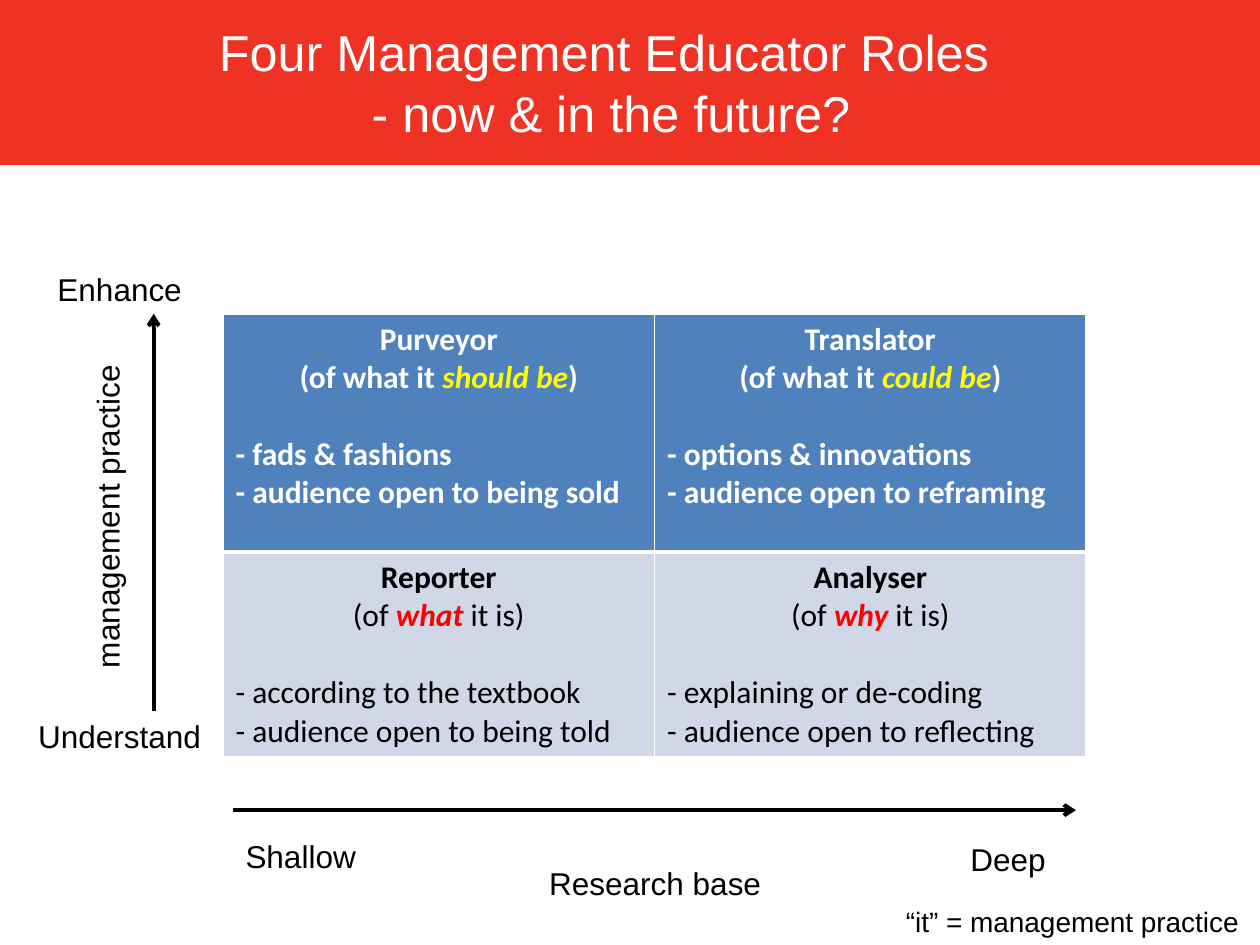
from lxml.etree import SubElement
from pptx import Presentation
from pptx.dml.color import RGBColor
from pptx.enum.shapes import MSO_CONNECTOR, MSO_SHAPE
from pptx.enum.text import MSO_ANCHOR, MSO_AUTO_SIZE, PP_ALIGN
from pptx.oxml import parse_xml
from pptx.oxml.ns import nsdecls, qn
from pptx.util import Inches, Pt

WHITE = RGBColor(0xFF, 0xFF, 0xFF)
BLACK = RGBColor(0, 0, 0)
BANNER_RED = RGBColor(0xEE, 0x32, 0x24)
BLUE = RGBColor(0x4F, 0x81, 0xBD)
PALE_BLUE = RGBColor(0xD0, 0xD8, 0xE8)
YELLOW = RGBColor(0xFF, 0xFF, 0)
RED = RGBColor(0xFF, 0, 0)
LEFT, CENTER, RIGHT = PP_ALIGN.LEFT, PP_ALIGN.CENTER, PP_ALIGN.RIGHT

# Content
TITLE = "Four Management Educator Roles \v- now & in the future?"

# Role, scope (before, stressed, after), traits
ROLES = [
    [("Purveyor", ("(of what it ", "should be", ")"),
      ["- fads & fashions", "- audience open to being sold"]),
     ("Translator", ("(of what it ", "could be", ")"),
      ["- options & innovations", "- audience open to reframing"])],
    [("Reporter", ("(of ", "what ", "it is)"),
      ["- according to the textbook", "- audience open to being told"]),
     ("Analyser", ("(of ", "why", " it is)"),
      ["- explaining or de-coding", "- audience open to reflecting"])],
]
ROW_STYLES = [
    {"height": 1.89, "fill": BLUE, "text": WHITE, "stress": YELLOW, "bold": True,
     "borders": {"L": 1, "R": 1, "T": 1, "B": 3}},
    {"height": 1.5, "fill": PALE_BLUE, "text": BLACK, "stress": RED, "bold": False,
     "borders": {"L": 1, "R": 1, "T": 3, "B": 1}},
]
GRID_LEFT, GRID_TOP, GRID_WIDTH = 1.77, 2.49, 6.85

# Text, left, top, width, alignment, rotation
LABEL_HEIGHT = 0.4
LABELS = [
    ("Research base", 3.86, 6.81, 2.68, CENTER, 0),
    ("Shallow", 1.85, 6.59, 1.49, LEFT, 0),
    ("Deep", 7.29, 6.62, 1.42, CENTER, 0),
    ("management practice", -0.53, 3.82, 2.76, LEFT, 270),
    ("Understand", 0.2, 5.64, 1.5, CENTER, 0),
    ("Enhance", 0.2, 2.09, 1.5, CENTER, 0),
    ("“it” = management practice", 6.53, 7.1, 3.47, RIGHT, 0),
]
NOTE_SIZE = 16

# Start and end of each axis
AXES = [((1.85, 6.43), (8.54, 6.43)), ((1.22, 5.64), (1.22, 2.49))]


def set_font(font, color, **values):
    for name, value in values.items():
        setattr(font, name, value)
    font.color.rgb = color


def add_run(paragraph, text, color, **values):
    run = paragraph.add_run()
    run.text = text
    set_font(run.font, color, **values)


def add_borders(cell, widths):
    properties = cell._tc.get_or_add_tcPr()
    for position, (side, width) in enumerate(widths.items()):
        properties.insert(position, parse_xml(
            f'<a:ln{side} {nsdecls("a")} w="{Pt(width)}"><a:solidFill>'
            f'<a:srgbClr val="{WHITE}"/></a:solidFill></a:ln{side}>'))


def fill_role(cell, role, scope, traits, style):
    cell.fill.solid()
    cell.fill.fore_color.rgb = style["fill"]
    add_borders(cell, style["borders"])
    frame = cell.text_frame
    plain = {"name": "Calibri", "size": Pt(18), "bold": style["bold"], "italic": False}
    strong = {**plain, "bold": True}

    heading = frame.paragraphs[0]
    heading.alignment = CENTER
    add_run(heading, role, style["text"], **strong)

    scope_line = frame.add_paragraph()
    scope_line.alignment = CENTER
    before, stressed, after = scope
    add_run(scope_line, before, style["text"], **plain)
    add_run(scope_line, stressed, style["stress"], **{**strong, "italic": True})
    add_run(scope_line, after, style["text"], **plain)

    for index, trait in enumerate(traits):
        trait_line = frame.add_paragraph()
        trait_line.alignment = LEFT
        trait_line.space_before = Pt(0 if index else 22)
        add_run(trait_line, trait, style["text"], **plain)


def add_label(slide, text, left, top, width, alignment, rotation):
    label = slide.shapes.add_textbox(
        Inches(left), Inches(top), Inches(width), Inches(LABEL_HEIGHT))
    label.rotation = rotation
    frame = label.text_frame
    frame.word_wrap = True
    frame.auto_size = MSO_AUTO_SIZE.SHAPE_TO_FIT_TEXT
    frame.vertical_anchor = MSO_ANCHOR.MIDDLE if rotation else MSO_ANCHOR.TOP
    line = frame.paragraphs[0]
    line.alignment = alignment
    is_note = alignment == RIGHT
    add_run(line, text, BLACK, name="Arial", size=Pt(NOTE_SIZE if is_note else 18))
    if is_note:
        add_run(line, " ", BLACK, name="Arial", size=Pt(18))


def add_axis(slide, start, end):
    axis = slide.shapes.add_connector(
        MSO_CONNECTOR.STRAIGHT, *(Inches(value) for value in start + end))
    axis.line.color.rgb = BLACK
    axis.line.width = Pt(2.25)
    SubElement(axis.line._get_or_add_ln(), qn("a:tailEnd"), type="arrow")
    SubElement(axis._element.spPr, qn("a:effectLst"))


def main():
    deck = Presentation()
    deck.slide_width, deck.slide_height = Inches(10), Inches(7.5)
    slide = deck.slides.add_slide(deck.slide_layouts[5])

    # Banner, sent behind the title
    banner = slide.shapes.add_shape(MSO_SHAPE.RECTANGLE, 0, 0, Inches(10), Inches(1.31))
    banner.shadow.inherit = False
    banner.fill.solid()
    banner.fill.fore_color.rgb = BANNER_RED
    banner.line.fill.background()
    slide.shapes._spTree.insert(2, banner._element)

    # Title
    title = slide.shapes.title
    place = {"left": 0.35, "top": 0.18, "width": 9, "height": 0.94}
    for name, value in place.items():
        setattr(title, name, Inches(value))
    title.text_frame.text = TITLE
    title.text_frame.auto_size = MSO_AUTO_SIZE.NONE
    title.text_frame.vertical_anchor = MSO_ANCHOR.MIDDLE
    title_line = title.text_frame.paragraphs[0]
    title_line.alignment = CENTER
    for run in title_line.runs:
        set_font(run.font, WHITE, name="Arial", size=Pt(28.8))

    # Role grid
    grid_height = sum(style["height"] for style in ROW_STYLES)
    grid = slide.shapes.add_table(
        len(ROLES), len(ROLES[0]), Inches(GRID_LEFT), Inches(GRID_TOP),
        Inches(GRID_WIDTH), Inches(grid_height)).table
    for row, (roles, style) in enumerate(zip(ROLES, ROW_STYLES)):
        grid.rows[row].height = Inches(style["height"])
        for column, role in enumerate(roles):
            fill_role(grid.cell(row, column), *role, style)

    # Axes and their labels
    for start, end in AXES:
        add_axis(slide, start, end)
    for label in LABELS:
        add_label(slide, *label)

    deck.save("out.pptx")


if __name__ == "__main__":
    main()
